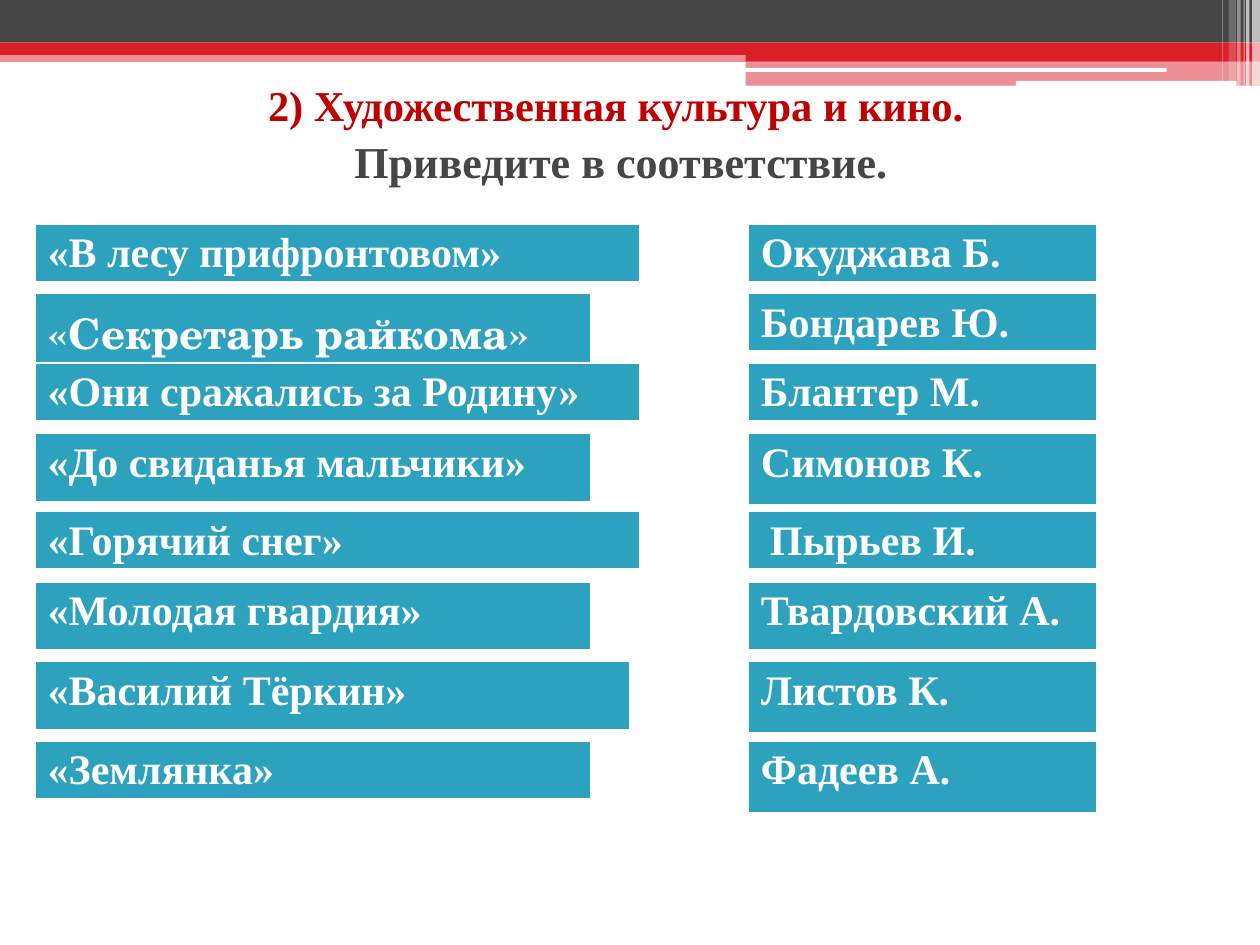
"""Build a matching-task slide about wartime songs, books and films."""
from lxml import etree
from pptx import Presentation
from pptx.dml import color
from pptx.enum import shapes, text
from pptx.oxml import ns
from pptx.util import Cm, Pt

SERIF, SCHOOL = "Times New Roman", "TeX Gyre Schola"
RED, DARK, WHITE, TEAL = "DA1F28", "464646", "FFFFFF", "2DA2BF"
RECT, ROUND = shapes.MSO_SHAPE.RECTANGLE, shapes.MSO_SHAPE.ROUNDED_RECTANGLE

BANDS = [
    (RECT, 0, 1.02, 25.4, 0.23, RED, 50),
    (RECT, 0, 0, 25.4, 0.86, DARK, 100),
    (RECT, 0, 0.86, 25.4, 0.25, RED, 100),
    (RECT, 15.03, 0.98, 10.37, 0.25, RED, 100),
    (RECT, 15.03, 1.23, 10.37, 0.5, RED, 50),
    (ROUND, 15.02, 1.37, 8.5, 0.08, WHITE, 100),
    (ROUND, 20.48, 1.63, 4.45, 0.1, WHITE, 100),
]
STRIPES = [
    (25.24, 0.16, 1.73, 65), (25.12, 0.07, 1.73, 65), (25.07, 0.02, 1.73, 60),
    (24.94, 0.07, 1.73, 40), (24.77, 0.15, 1.63, 20), (24.64, 0.02, 1.63, 30),
]
TITLE = [("2) Художественная культура и кино. ", 24.3, "C00000"),
         ("Приведите в соответствие.", 25.2, DARK)]

LOW, MID, TALL = 1.27, 1.4, 1.47
ROW_TOPS = [4.52, 5.92, 7.32, 8.74, 10.31, 11.73, 13.34, 14.94]
WORKS = [
    ("«В лесу прифронтовом»", 12.19, LOW), ("«Секретарь райкома»", 11.2, LOW),
    ("«Они сражались за Родину»", 12.19, LOW), ("«До свиданья мальчики»", 11.2, MID),
    ("«Горячий снег»", 12.19, LOW), ("«Молодая гвардия»", 11.2, MID),
    ("«Василий Тёркин»", 11.99, MID), ("«Землянка»", 11.2, LOW),
]
AUTHORS = [
    ("Окуджава Б.", 7.01, LOW), ("Бондарев Ю.", 7.01, LOW),
    ("Блантер М.", 7.01, LOW), ("Симонов К.", 7.01, TALL),
    ("Пырьев И.", 7.01, LOW), ("Твардовский А.", 7.01, MID),
    ("Листов К.", 7.01, TALL), ("Фадеев А.", 7.01, TALL),
]
COLUMNS = [(0.71, WORKS), (15.09, AUTHORS)]
FONTS = {"«Секретарь райкома»": SCHOOL}
INDENTS = {"Пырьев И.": 0.43}
BORDERS = [("a:lnL", 1), ("a:lnR", 1), ("a:lnT", 1), ("a:lnB", 3)]


def paint(fill, value, opacity=100):
    """Fill with a hex colour at an opacity in percent."""
    fill.solid()
    fill.fore_color.rgb = color.RGBColor.from_string(value)
    if opacity < 100:
        rgb = fill._xPr.find(ns.qn("a:solidFill"))[0]
        etree.SubElement(rgb, ns.qn("a:alpha"), val=str(opacity * 1000))


def write(para, words, size=24, font=SERIF, tint=WHITE):
    """Add a bold run to a paragraph."""
    span = para.add_run()
    span.text = words
    span.font.size, span.font.name, span.font.bold = Pt(size), font, True
    paint(span.font.fill, tint)


def add_band(page, kind, left, top, width, height, tint, opacity):
    """Add one plain bar of the header."""
    band = page.shapes.add_shape(kind, Cm(left), Cm(top), Cm(width), Cm(height))
    band.shadow.inherit = False
    band.line.fill.background()
    paint(band.fill, tint, opacity)


def add_borders(cell):
    """Give a cell white borders, thicker below."""
    props = cell._tc.get_or_add_tcPr()
    for index, (tag, width) in enumerate(BORDERS):
        line = etree.Element(ns.qn(tag), w=str(Pt(width)))
        fill = etree.SubElement(line, ns.qn("a:solidFill"))
        etree.SubElement(fill, ns.qn("a:srgbClr"), val=WHITE)
        props.insert(index, line)


def add_card(page, left, top, words, width, height):
    """Add a one-cell table holding a work or an author."""
    frame = page.shapes.add_table(1, 1, Cm(left), Cm(top), Cm(width), Cm(height))
    table = frame.table
    table.first_row = table.horz_banding = False
    if height == LOW:
        table.rows[0].height = Cm(1.19)
        frame.height = Cm(height)
    cell = table.cell(0, 0)
    cell.margin_left = Cm(INDENTS.get(words, 0.25))
    paint(cell.fill, TEAL)
    add_borders(cell)
    write(cell.text_frame.paragraphs[0], words, font=FONTS.get(words, SERIF))


def add_title(page):
    """Place and format the two-line title."""
    title = page.shapes.title
    title.left, title.top, title.width, title.height = Cm(1.09), Cm(1.73), Cm(22.86), Cm(2.21)
    frame = title.text_frame
    frame.auto_size = text.MSO_AUTO_SIZE.NONE
    frame.vertical_anchor = text.MSO_ANCHOR.MIDDLE
    frame.margin_top, frame.margin_bottom = 0, Cm(0.4)
    para = frame.paragraphs[0]
    para.alignment, para.line_spacing = text.PP_ALIGN.CENTER, 1.1
    for index, (words, size, tint) in enumerate(TITLE):
        if index:
            para.add_line_break()
        write(para, words, size=size, tint=tint)


def main():
    """Build and save the deck."""
    deck = Presentation()
    deck.slide_width, deck.slide_height = Cm(25.4), Cm(19.05)
    page = deck.slides.add_slide(deck.slide_layouts[5])
    for band in BANDS:
        add_band(page, *band)
    for left, width, height, opacity in STRIPES:
        add_band(page, RECT, left, 0, width, height, WHITE, opacity)
    add_title(page)
    for left, cards in COLUMNS:
        for top, card in zip(ROW_TOPS, cards):
            add_card(page, left, top, *card)
    deck.save("out.pptx")


if __name__ == "__main__":
    main()
